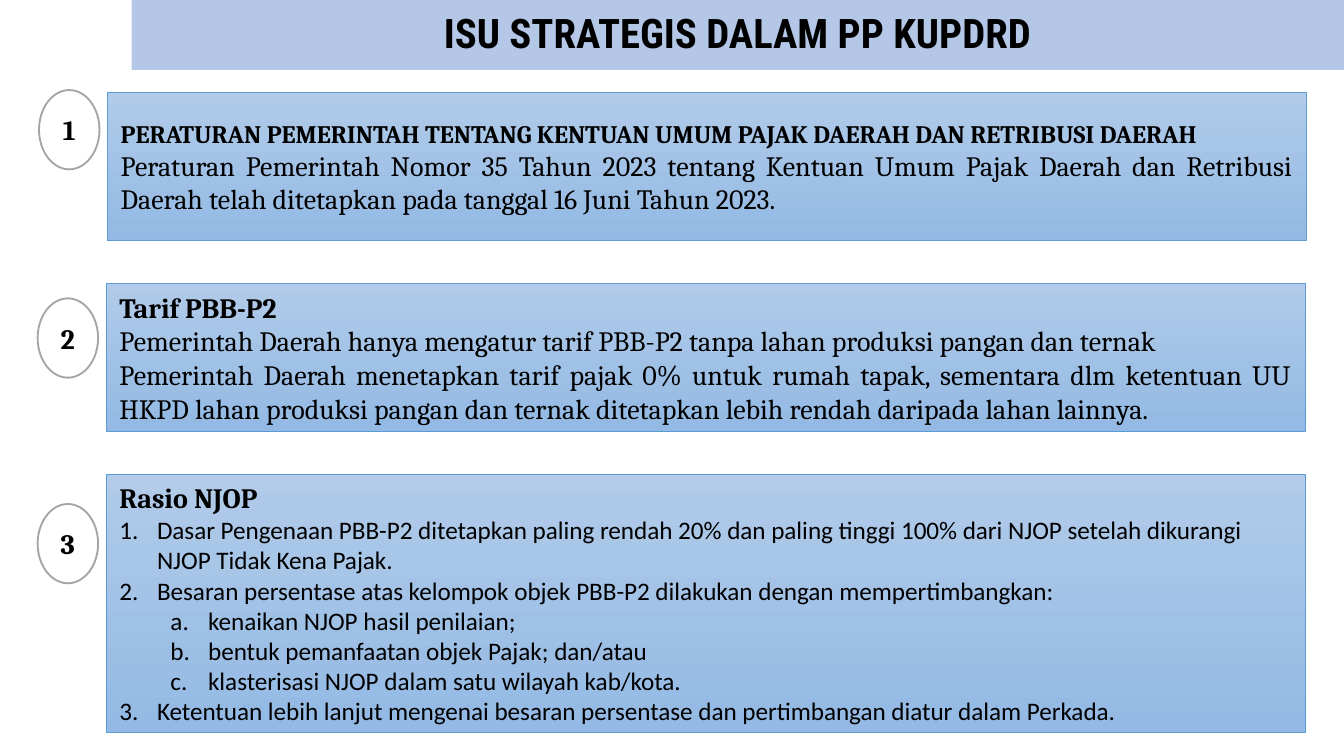
import pptx
import pptx.dml.color
import pptx.enum.shapes
import pptx.enum.text
import pptx.oxml
import pptx.oxml.ns
import pptx.util

Inches = pptx.util.Inches
SHAPES = pptx.enum.shapes.MSO_SHAPE
ALIGN = pptx.enum.text.PP_ALIGN
MIDDLE = pptx.enum.text.MSO_ANCHOR.MIDDLE

ISSUES = [
    (0.8, 0.69, 1.1, (0.29, 0.67), [
        ("heading_small", "PERATURAN PEMERINTAH TENTANG KENTUAN UMUM PAJAK DAERAH DAN RETRIBUSI DAERAH"),
        ("body", "Peraturan Pemerintah Nomor 35 Tahun 2023 tentang Kentuan Umum Pajak Daerah dan Retribusi Daerah telah ditetapkan pada tanggal 16 Juni Tahun 2023."),
    ]),
    (0.79, 2.11, 1.1, (0.28, 2.22), [
        ("heading", "Tarif PBB-P2"),
        ("body", "Pemerintah Daerah hanya mengatur tarif PBB-P2 tanpa lahan produksi pangan dan ternak"),
        ("body", "Pemerintah Daerah menetapkan tarif pajak 0% untuk rumah tapak, sementara dlm ketentuan UU HKPD lahan produksi pangan dan ternak ditetapkan lebih rendah daripada lahan lainnya."),
    ]),
    (0.79, 3.53, 1.92, (0.28, 3.75), [
        ("heading", "Rasio NJOP"),
        ("item", "Dasar Pengenaan PBB-P2 ditetapkan paling rendah 20% dan paling tinggi 100% dari NJOP setelah dikurangi NJOP Tidak Kena Pajak."),
        ("item", "Besaran persentase atas kelompok objek PBB-P2 dilakukan dengan mempertimbangkan:"),
        ("subitem", "kenaikan NJOP hasil penilaian;"),
        ("subitem", "bentuk pemanfaatan objek Pajak; dan/atau"),
        ("subitem", "klasterisasi NJOP dalam satu wilayah kab/kota."),
        ("item", "Ketentuan lebih lanjut mengenai besaran persentase dan pertimbangan diatur dalam Perkada."),
    ]),
]

STYLES = {
    "heading_small": ("Cambria", 13.5, True, ALIGN.JUSTIFY),
    "heading": ("Cambria", 15, True, ALIGN.JUSTIFY),
    "body": ("Cambria", 15, False, ALIGN.JUSTIFY),
    "item": ("Calibri", 13.5, False, ALIGN.LEFT),
    "subitem": ("Calibri", 13.5, False, ALIGN.LEFT),
    "number": ("Cambria", 15, True, ALIGN.CENTER),
    "title": ("Roboto Condensed", 21.8, True, ALIGN.CENTER),
}

LISTS = {"item": (0, 0.28, "arabicPeriod"), "subitem": (1, 0.66, "alphaLcPeriod")}


def rgb(value):
    """Turn a hex string into a colour."""
    return pptx.dml.color.RGBColor.from_string(value)


def number_paragraph(paragraph, level, margin, scheme):
    """Give a paragraph automatic numbering with a hanging indent."""
    paragraph.level = level
    properties = paragraph._p.get_or_add_pPr()
    properties.set("marL", str(Inches(margin)))
    properties.set("indent", str(Inches(-0.28)))
    numbering = pptx.oxml.parse_xml(
        f'<a:buAutoNum {pptx.oxml.ns.nsdecls("a")} type="{scheme}"/>')
    properties.append(numbering)


def write(frame, entries):
    """Fill a text frame with styled paragraphs, centred vertically."""
    frame.word_wrap = True
    frame.vertical_anchor = MIDDLE
    for index, (style, text) in enumerate(entries):
        paragraph = frame.add_paragraph() if index else frame.paragraphs[0]
        if style in LISTS:
            number_paragraph(paragraph, *LISTS[style])
        family, size, bold, paragraph.alignment = STYLES[style]
        run = paragraph.add_run()
        run.text = text
        run.font.name = family
        run.font.size = pptx.util.Pt(size)
        run.font.bold = bold
        run.font.color.rgb = rgb("000000")


def add_outlined(slide, kind, box, line, width):
    """Add a preset shape with an outline and no shadow."""
    shape = slide.shapes.add_shape(kind, *map(Inches, box))
    shape.shadow.inherit = False
    shape.line.color.rgb = rgb(line)
    shape.line.width = pptx.util.Pt(width)
    return shape


def add_title(slide, box):
    """Place and format the title band."""
    title = slide.shapes.title
    title.left, title.top, title.width, title.height = map(Inches, box)
    title.fill.solid()
    title.fill.fore_color.rgb = rgb("B4C7E7")
    frame = title.text_frame
    frame.auto_size = pptx.enum.text.MSO_AUTO_SIZE.NONE
    frame.margin_left = frame.margin_right = Inches(0.07)
    frame.margin_top = frame.margin_bottom = Inches(0.04)
    write(frame, [("title", "ISU STRATEGIS DALAM PP KUPDRD")])
    frame.paragraphs[0].line_spacing = 0.9


def add_panel(slide, box, entries):
    """Add a gradient panel holding the text of one issue."""
    panel = add_outlined(slide, SHAPES.RECTANGLE, box, "5B9BD5", 0.5)
    panel.fill.gradient()
    panel.fill.gradient_angle = 270
    for stop, position, color in zip(panel.fill.gradient_stops, (0, 1), ("B1CBE9", "93B9E4")):
        stop.position = position
        stop.color.rgb = rgb(color)
    write(panel.text_frame, entries)


def add_badge(slide, box, number):
    """Add the numbered oval beside a panel."""
    badge = add_outlined(slide, SHAPES.OVAL, box, "A5A5A5", 1)
    badge.fill.solid()
    badge.fill.fore_color.rgb = rgb("FFFFFF")
    badge.text_frame.margin_left = badge.text_frame.margin_right = 0
    write(badge.text_frame, [("number", str(number))])


def main():
    """Build the slide and save it."""
    deck = pptx.Presentation()
    deck.slide_width = Inches(10)
    deck.slide_height = deck.slide_width * 9 // 16
    slide = deck.slides.add_slide(deck.slide_layouts[5])
    add_title(slide, (0.98, 0, 9.02, 0.52))
    for number, (left, top, height, badge_corner, entries) in enumerate(ISSUES, 1):
        add_panel(slide, (left, top, 8.92, height), entries)
        add_badge(slide, (*badge_corner, 0.45, 0.59), number)
    deck.save("out.pptx")


if __name__ == "__main__":
    main()
